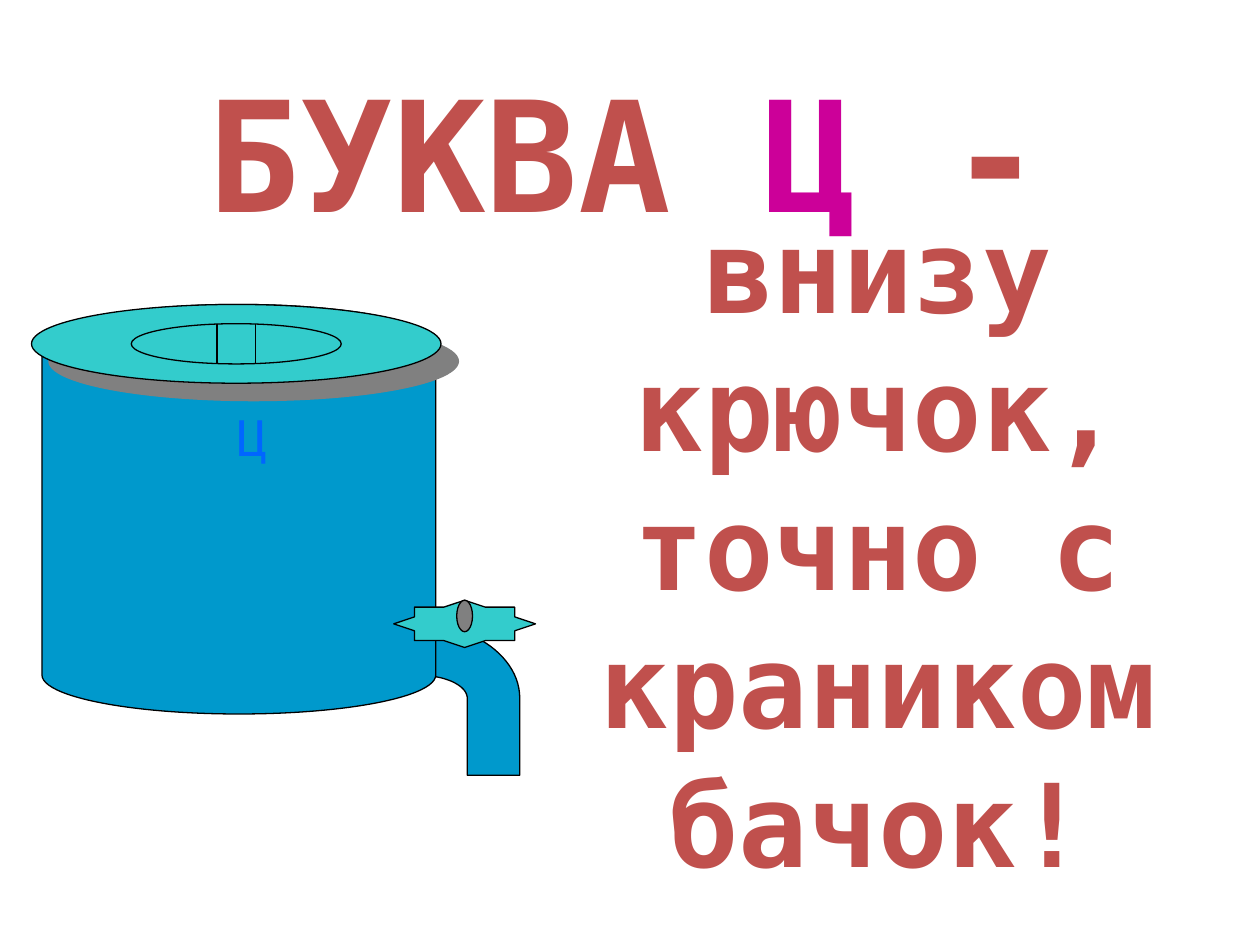
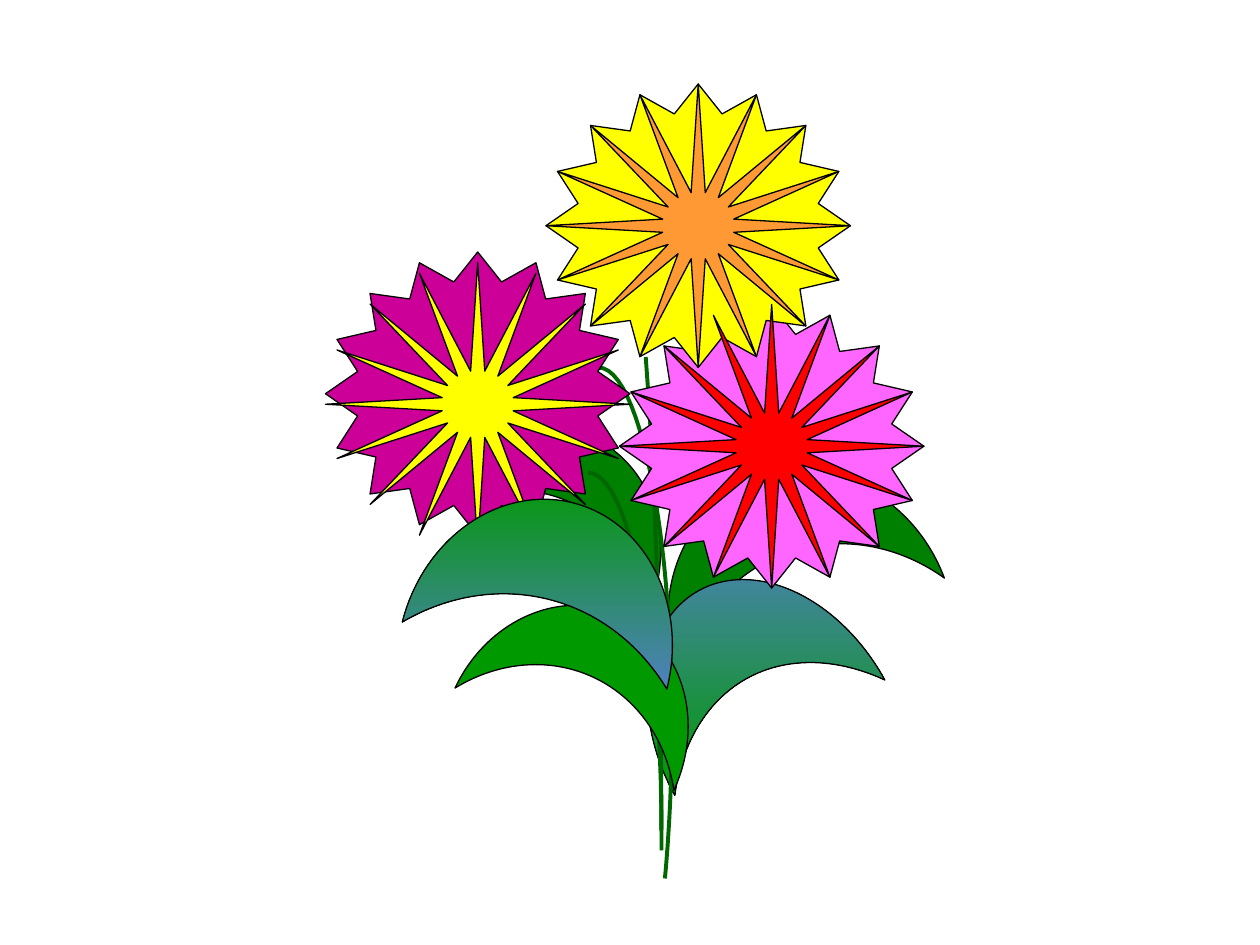
import pptx
import pptx.dml.color
import pptx.enum.shapes
import pptx.enum.text
import pptx.oxml.ns
import pptx.util
from lxml import etree

Pt = pptx.util.Pt
SHAPES = pptx.enum.shapes.MSO_SHAPE
FONT = "DejaVu Sans Mono"
BLACK, GREY, RED = "000000", "808080", "C0504D"
WATER, TURQUOISE = "0099CC", "33CCCC"
STEM_GREEN, DARK_GREEN, LEAF_GREEN, LEAF_BLUE = "006600", "008000", "009900", "4F81BD"


def rgb(hex_color):
    return pptx.dml.color.RGBColor.from_string(hex_color)


def add_effects(shape):
    return etree.SubElement(shape.element.spPr, pptx.oxml.ns.qn("a:effectLst"))


def paint(shape, fill=None, line=BLACK, width=0.75):
    """Fill with nothing, one colour, or a top-to-bottom pair of colours."""
    shape.shadow.inherit = False
    if fill is None:
        shape.fill.background()
    elif isinstance(fill, tuple):
        shape.fill.gradient()
        shape.fill.gradient_angle = 270
        for stop, color in zip(shape.fill.gradient_stops, fill):
            stop.color.rgb = rgb(color)
        shape.element.spPr.find(pptx.oxml.ns.qn("a:gradFill")).set("rotWithShape", "0")
    else:
        shape.fill.solid()
        shape.fill.fore_color.rgb = rgb(fill)
    shape.line.color.rgb = rgb(line)
    shape.line.width = Pt(width)


def add_preset(slide, origin, kind, box, fill, adjust=None, rotation=0):
    left, top, width, height = box
    shape = slide.shapes.add_shape(
        kind, Pt(origin[0] + left), Pt(origin[1] + top), Pt(width), Pt(height))
    if adjust is not None:
        shape.adjustments[0] = adjust
    shape.rotation = rotation
    paint(shape, fill)
    return shape


def flatten(outline, steps=24):
    """Turn (x, y) points and (x1, y1, x2, y2, x, y) Bézier curves into points."""
    points = []
    for part in outline:
        if len(part) == 2:
            points.append(part)
            continue
        knots = [points[-1], part[:2], part[2:4], part[4:]]
        for step in range(1, steps + 1):
            t = step / steps
            weights = ((1 - t) ** 3, 3 * t * (1 - t) ** 2, 3 * t * t * (1 - t), t ** 3)
            points.append(tuple(sum(w * k[axis] for w, k in zip(weights, knots))
                                for axis in (0, 1)))
    return points


def add_outline(slide, origin, outline, close):
    start, *rest = [(Pt(origin[0] + x), Pt(origin[1] + y)) for x, y in flatten(outline)]
    builder = slide.shapes.build_freeform(*start)
    builder.add_line_segments(rest, close=close)
    return builder.convert_to_shape()


def add_text(slide, box, paragraphs, size, bold=True, margins=(7.2, 3.6)):
    """Centred text; each paragraph is a list of (text, colour) runs."""
    frame = slide.shapes.add_textbox(*map(Pt, box)).text_frame
    frame.word_wrap = True
    frame.margin_left = frame.margin_right = Pt(margins[0])
    frame.margin_top = frame.margin_bottom = Pt(margins[1])
    for index, runs in enumerate(paragraphs):
        paragraph = frame.add_paragraph() if index else frame.paragraphs[0]
        paragraph.alignment = pptx.enum.text.PP_ALIGN.CENTER
        paragraph.font.name = FONT
        paragraph.font.size = Pt(size)
        paragraph.font.bold = bold
        for text, color in runs:
            run = paragraph.add_run()
            run.text = text
            run.font.color.rgb = rgb(color)


def draw_lid(slide, origin):
    lid = add_preset(slide, origin, SHAPES.OVAL, (0, 0, 234, 45), TURQUOISE)
    lid.shadow.inherit = True
    shadow = etree.SubElement(add_effects(lid), pptx.oxml.ns.qn("a:outerShdw"),
                              dist=str(Pt(14.1)), dir="2700000", algn="ctr", rotWithShape="0")
    etree.SubElement(shadow, pptx.oxml.ns.qn("a:srgbClr"), val=GREY)
    add_preset(slide, origin, SHAPES.OVAL, (57, 11, 120, 23), TURQUOISE)
    for x in (106, 128):
        grip = slide.shapes.add_connector(
            pptx.enum.shapes.MSO_CONNECTOR.STRAIGHT,
            Pt(origin[0] + x), Pt(origin[1] + 11), Pt(origin[0] + x), Pt(origin[1] + 34))
        grip.line.color.rgb = rgb(BLACK)
        grip.line.width = Pt(0.75)
        add_effects(grip)


def draw_tank(slide, origin):
    spout = [(180, 197.5), (193, 169.5), (193, 183), (222, 183),
             (253.5, 183, 279, 202, 279, 225), (279, 269), (249, 269), (249, 225),
             (249, 218, 237, 212, 222, 212), (193, 212), (193, 225)]
    paint(add_outline(slide, origin, spout, close=True), WATER)
    add_preset(slide, origin, SHAPES.CAN, (6, 0, 225, 234), WATER, 0.198)
    draw_lid(slide, origin)
    add_preset(slide, origin, SHAPES.STAR_8_POINT, (207, 169, 81, 27), TURQUOISE, 0.383)
    add_preset(slide, origin, SHAPES.OVAL, (243, 169, 9, 18), GREY)
    add_text(slide, (origin[0] + 96, origin[1] + 59, 60, 34),
             [[("Ц", "0066FF")]], 28, bold=False, margins=(0, 0))


def draw_letter_slide(slide):
    draw_tank(slide, (18, 174))
    add_text(slide, (330, 109.4, 343.5, 403),
             [[("внизу крючок,", RED)], [("точно с краником бачок!", RED)]], 66)
    add_text(slide, (54, 30, 606, 113),
             [[("БУКВА ", RED), ("Ц ", "CC0099"), ("-", RED)]], 88)


def draw_leaves(slide, origin, leaves):
    for box, rotation, curve, fill in leaves:
        add_preset(slide, origin, SHAPES.MOON, box, fill, curve, rotation)


def draw_stem(slide, origin, outline):
    paint(add_outline(slide, origin, outline, close=False), None, STEM_GREEN, 2.25)


def draw_blooms(slide, origin):
    """Petals of all flowers lie behind all the centres."""
    petals = [(0, 96, "CC0099"), (168, 126, "FF66FF"), (126, 0, "FFFF00")]
    centres = [(168, 126, "FF0000"), (0, 102, "FFFF00"), (126, 0, "FF9933")]
    for stars, depth in ((petals, 0.402), (centres, 0.119)):
        for left, top, color in stars:
            add_preset(slide, origin, SHAPES.STAR_16_POINT,
                       (left, top, 174, 162), color, depth)


def draw_bouquet(slide, origin):
    draw_leaves(slide, origin, [
        ((96, 168, 78, 138), 110.6, 0.5, DARK_GREEN),
        ((217, 187.5, 90, 162), 69.5, 0.5, DARK_GREEN),
        ((188.5, 263, 96, 137), 61.2, 0.596, (LEAF_BLUE, LEAF_GREEN))])
    draw_stem(slide, origin, [(156, 162), (179, 162, 198, 254, 198, 366),
                              (198, 396, 196.5, 426.5, 194, 454)])
    draw_stem(slide, origin, [(183, 156), (188.5, 228.5, 192, 331, 192, 438)])
    draw_blooms(slide, origin)
    draw_stem(slide, origin, [(150, 222), (173, 222, 192, 313.5, 192, 426)])
    draw_leaves(slide, origin, [
        ((114, 270, 78, 138), 115, 0.5, LEAF_GREEN),
        ((85.5, 205, 90, 156), 104.2, 0.632, (LEAF_GREEN, LEAF_BLUE))])


def main():
    deck = pptx.Presentation()
    deck.slide_width, deck.slide_height = Pt(720), Pt(540)
    blank = deck.slide_layouts[6]
    draw_letter_slide(deck.slides.add_slide(blank))
    draw_bouquet(deck.slides.add_slide(blank), (186, 48))
    deck.save("out.pptx")


if __name__ == "__main__":
    main()
